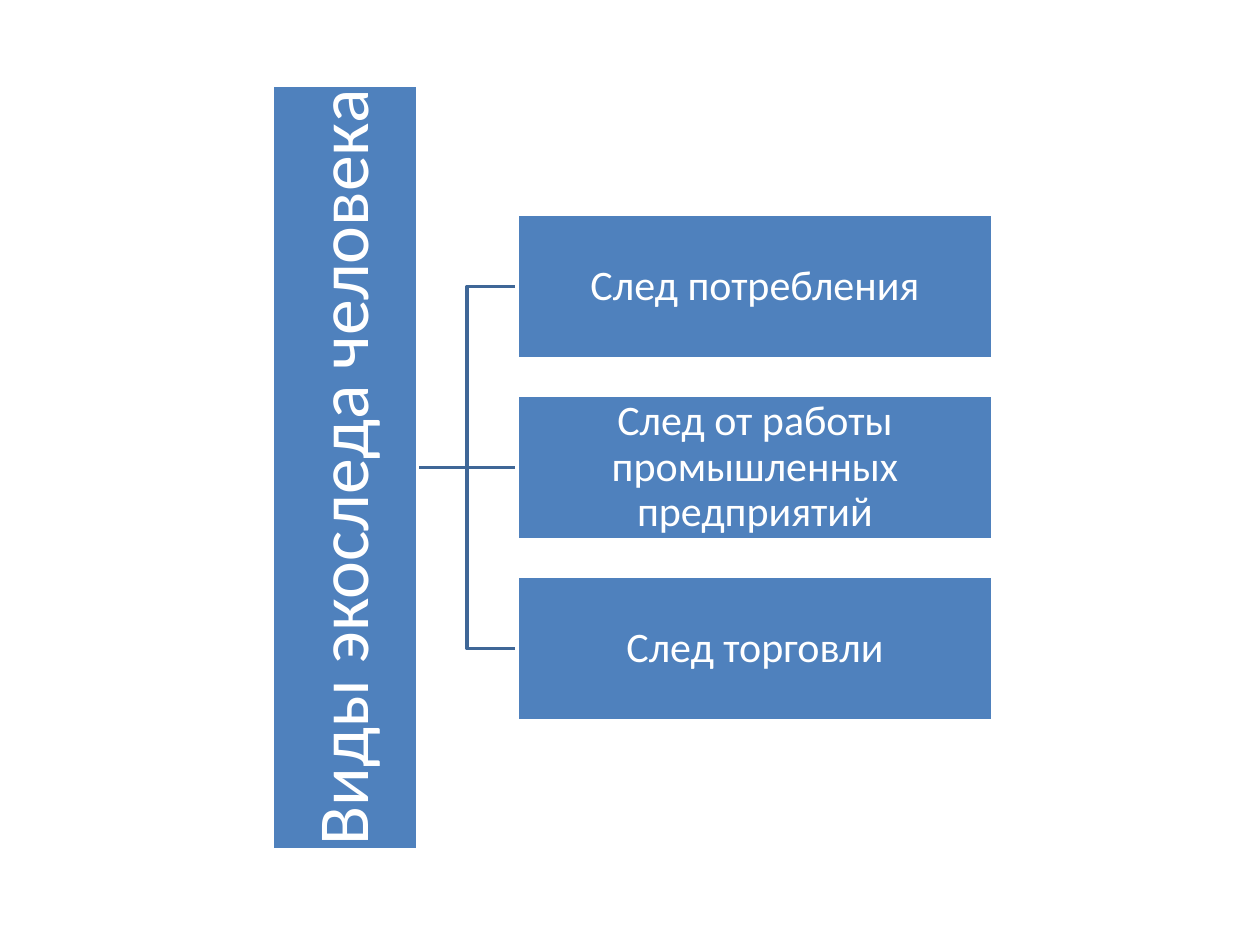
"""Build a slide with a horizontal hierarchy of ecological footprint types."""
from pptx import Presentation
from pptx import util as u
from pptx.dml.color import RGBColor
from pptx.enum import shapes, text
from pptx.oxml.ns import qn
from lxml import etree

BLUE = RGBColor(0x4F, 0x81, 0xBD)
LINK = RGBColor(0x3F, 0x67, 0x97)
WHITE = RGBColor(0xFF, 0xFF, 0xFF)
BRANCHES = [
    "След потребления",
    "След от работы промышленных предприятий",
    "След торговли",
]


def px(n):
    return u.Emu(round(n * 914400 / 126))


class Diagram:
    font = "Calibri"
    line_width = u.Pt(2)

    def __init__(self, slide):
        self.slide = slide

    def box(self, label, left, top, width, height, size, inset, rotation=0, wrap=True):
        sp = self.slide.shapes.add_shape(
            shapes.MSO_SHAPE.RECTANGLE, px(left), px(top), px(width), px(height))
        sp.rotation = rotation
        sp.shadow.inherit = False
        sp.fill.solid()
        sp.fill.fore_color.rgb = BLUE
        sp.line.color.rgb = WHITE
        sp.line.width = self.line_width
        tf = sp.text_frame
        tf.text = label
        tf.word_wrap = wrap
        tf.vertical_anchor = text.MSO_ANCHOR.MIDDLE
        tf.margin_left = tf.margin_right = px(inset)
        tf.margin_top = tf.margin_bottom = px(inset)
        p = tf.paragraphs[0]
        p.alignment = text.PP_ALIGN.CENTER
        p.line_spacing = 0.9
        r = p.runs[0]
        r.font.name = self.font
        r.font.size = u.Pt(size)
        r.font.color.rgb = WHITE
        return sp

    def link(self, root, branch):
        x = root.left + (root.width + root.height) // 2
        y = root.top + root.height // 2
        end_y = branch.top + branch.height // 2
        kind = shapes.MSO_CONNECTOR.STRAIGHT if y == end_y else shapes.MSO_CONNECTOR.ELBOW
        c = self.slide.shapes.add_connector(kind, x, y, branch.left, end_y)
        c.begin_connect(root, 2)
        c.begin_x, c.begin_y = x, y
        c.end_connect(branch, 1)
        c.line.color.rgb = LINK
        c.line.width = self.line_width
        etree.SubElement(c._element.spPr, qn("a:effectLst"))
        self.slide.shapes._spTree.insert(2, c._element)


def main():
    prs = Presentation()
    prs.slide_width, prs.slide_height = px(1260), px(945)
    d = Diagram(prs.slides.add_slide(prs.slide_layouts[6]))
    top, height, step = 395, 145, 181
    root = d.box("Виды экоследа человека", -37, top, 764, height, 41, 2,
                 rotation=270, wrap=False)
    for i, label in enumerate(BRANCHES):
        branch = d.box(label, 517, top + (i - 1) * step, 476, height, 24, 2)
        d.link(root, branch)
    prs.save("out.pptx")


if __name__ == "__main__":
    main()
